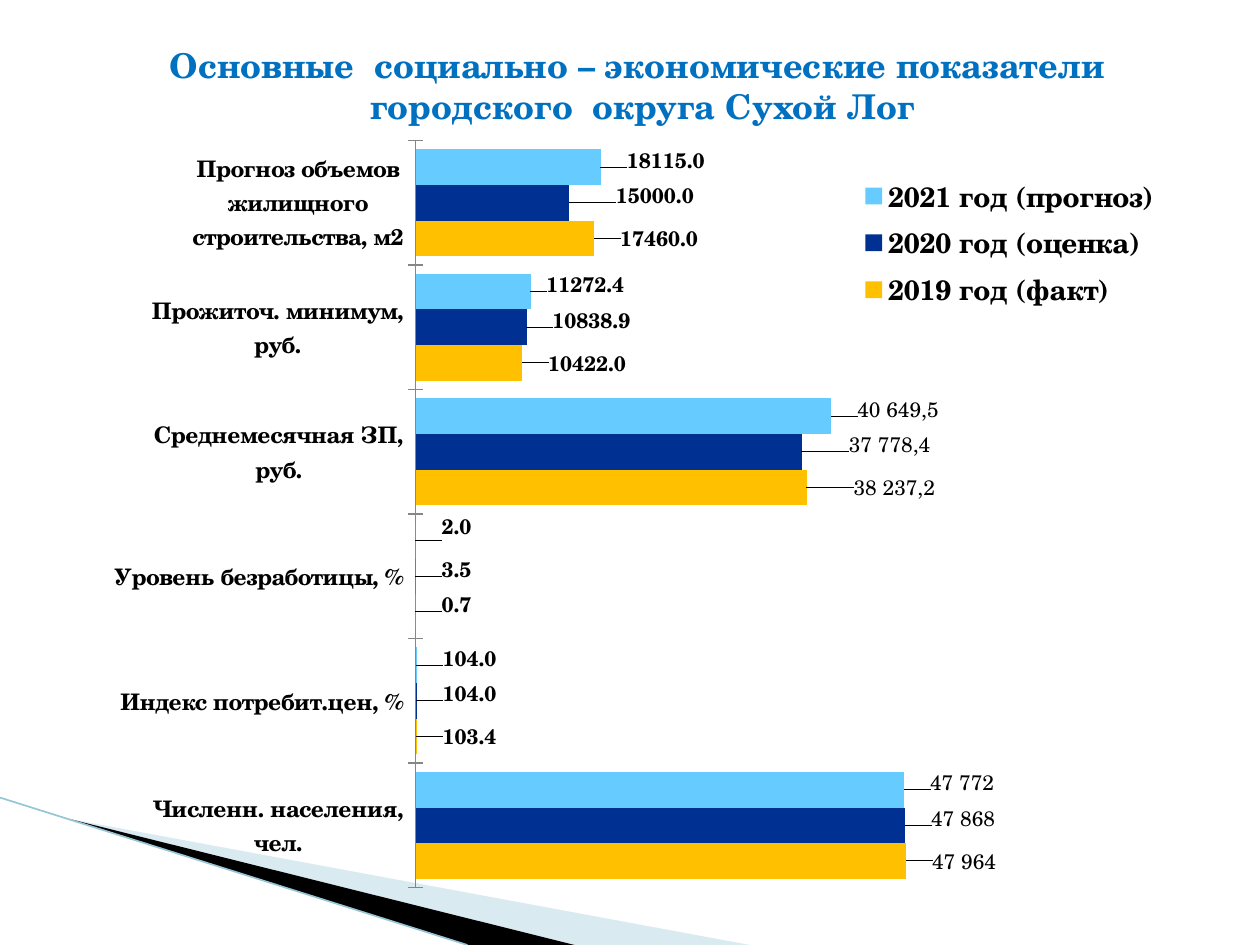
from dataclasses import dataclass

from lxml.etree import SubElement
from pptx import Presentation
from pptx.chart.data import CategoryChartData
from pptx.dml.color import RGBColor
from pptx.enum.chart import (XL_CHART_TYPE, XL_LABEL_POSITION, XL_LEGEND_POSITION,
                             XL_TICK_MARK)
from pptx.enum.shapes import MSO_CONNECTOR
from pptx.enum.text import MSO_ANCHOR, PP_ALIGN
from pptx.oxml import parse_xml
from pptx.oxml.ns import nsdecls, qn
from pptx.util import Inches, Pt


@dataclass(frozen=True)
class Theme:
    """Colours, faces and type sizes of the slide."""
    face: str = "TeX Gyre Schola"
    base: str = "Courier New"
    title: str = "0070C0"
    text: str = "000000"
    axis: str = "868686"
    pale: str = "A0CBDC"
    edge: str = "97C5D8"
    head: float = 19.5
    body: float = 18
    key: float = 16
    tick: float = 13
    label: float = 12


THEME = Theme()
TITLE = ("Основные  социально – экономические показатели ",
         "городского  округа Сухой Лог")
CATS = ("Численн. населения, чел.", "Индекс потребит.цен, %",
        "Уровень безработицы, %", "Среднемесячная ЗП, руб.",
        "Прожиточ. минимум, руб.", "Прогноз объемов жилищного строительства, м2")
SERIES = (
    ("2019 год (факт)", "FFC000", (47964, 103.4, 0.7, 38237.2, 10422, 17460),
     {0: "47 964", 3: "38 237,2"},
     ((0.02, 0), (0.02, 0), (0.02, -0.01), (0.04, 0), (0.02, 0), (0.02, 0))),
    ("2020 год (оценка)", "003192", (47868, 104, 3.5, 37778.4, 10838.9, 15000),
     {0: "47 868", 3: "37 778,4"},
     ((0.02, -0.01), (0.02, -0.01), (0.02, -0.01), (0.04, -0.01),
      (0.02, -0.01), (0.04, -0.01))),
    ("2021 год (прогноз)", "66CCFF", (47772, 104, 2, 40649.5, 11272.4, 18115),
     {0: "47 772", 3: "40 649,5"},
     ((0.02, -0.01), (0.02, -0.01), (0.02, -0.02), (0.02, -0.01),
      (0.01, -0.01), (0.02, -0.01))),
)


def style(font, size, color=THEME.text, bold=True, face=THEME.face):
    """Set face, size, weight and colour of a font."""
    font.name, font.size, font.bold = face, Pt(size), bold
    font.color.rgb = RGBColor.from_string(color)


def layout(**parts):
    """Return a manual chart layout element."""
    body = "".join(f'<c:{name} val="{val}"/>' for name, val in parts.items())
    return parse_xml(f'<c:layout {nsdecls("c")}><c:manualLayout>{body}'
                     '</c:manualLayout></c:layout>')


def place(part, **parts):
    """Give a chart part a manual layout in place of its old one."""
    for old in part.findall(qn("c:layout")):
        part.remove(old)
    node = layout(**parts)
    if part.tag == qn("c:plotArea"):
        part.insert(0, node)
    else:
        part[0].addnext(node)


def wedge(slide, points, color, alpha=100):
    """Draw a filled outline through points given in inches."""
    path = [(Inches(x), Inches(y)) for x, y in points]
    pen = slide.shapes.build_freeform(*path[0])
    pen.add_line_segments(path[1:], close=True)
    shape = pen.convert_to_shape()
    shape.shadow.inherit = False
    shape.line.fill.background()
    shape.fill.solid()
    shape.fill.fore_color.rgb = RGBColor.from_string(color)
    if alpha < 100:
        tint = shape.fill._xPr.find(f".//{qn('a:srgbClr')}")
        SubElement(tint, qn("a:alpha"), val=str(alpha * 1000))


def corner(slide, left, top, width, height):
    """Draw the wedges and the edge line in the lower left corner."""
    base = top + height
    tip = left + 0.55, top + 0.17
    wedge(slide, (tip, (left + width, base), (left + 4.56, base)), THEME.pale, 40)
    wedge(slide, (tip, (left + 4.56, base), (left + 3.71, base)), THEME.text)
    edge = slide.shapes.add_connector(MSO_CONNECTOR.STRAIGHT, Inches(left), Inches(top),
                                      Inches(left + 3.71), Inches(base))
    edge.line.width = Pt(0.95)
    edge.line.color.rgb = RGBColor.from_string(THEME.edge)
    SubElement(edge._element.spPr, qn("a:effectLst"))


def heading(slide, left, top, width, height):
    """Write the centred slide title."""
    box = slide.shapes.add_textbox(*map(Inches, (left, top, width, height)))
    frame = box.text_frame
    frame.word_wrap = True
    frame.vertical_anchor = MSO_ANCHOR.BOTTOM
    frame.margin_top = frame.margin_bottom = 0
    para = frame.paragraphs[0]
    para.alignment = PP_ALIGN.CENTER
    para.text = "\v".join(TITLE)
    style(para.font, THEME.head, THEME.title)


def tag(series, index, text, shift):
    """Label one bar, moved by a share of the chart size."""
    label = series.points[index].data_label
    if text:
        run = label.text_frame.paragraphs[0].add_run()
        run.text = text
        style(run.font, THEME.label, bold=False)
    else:
        style(label.font, THEME.label)
    label.position = XL_LABEL_POSITION.OUTSIDE_END
    node = next(item for item in series._element.iter(qn("c:dLbl"))
                if item.find(qn("c:idx")).get("val") == str(index))
    if not text:
        node[0].addnext(parse_xml(
            f'<c:numFmt {nsdecls("c")} formatCode="0.0" sourceLinked="0"/>'))
    place(node, x=shift[0], y=shift[1])


def bars(slide, left, top, width, height):
    """Add the bar chart of yearly figures."""
    data = CategoryChartData(number_format="0.0")
    data.categories = CATS
    for name, _, vals, _, _ in SERIES:
        data.add_series(name, vals)
    chart = slide.shapes.add_chart(XL_CHART_TYPE.BAR_CLUSTERED,
                                   *map(Inches, (left, top, width, height)), data).chart
    style(chart.font, THEME.body, bold=False, face=THEME.base)
    chart.has_title = False
    plot = chart.plots[0]
    plot.gap_width, plot.overlap, plot.vary_by_categories = 50, 0, False
    for series, (_, color, _, texts, shifts) in zip(plot.series, SERIES):
        series.format.fill.solid()
        series.format.fill.fore_color.rgb = RGBColor.from_string(color)
        labels = series.data_labels
        labels.show_value = True
        labels.number_format, labels.number_format_is_linked = "0.0", False
        style(labels.font, THEME.label)
        for index, shift in enumerate(shifts):
            tag(series, index, texts.get(index), shift)
    cat, val = chart.category_axis, chart.value_axis
    cat.major_tick_mark = XL_TICK_MARK.CROSS
    cat.format.line.color.rgb = RGBColor.from_string(THEME.axis)
    style(cat.tick_labels.font, THEME.tick)
    val.minimum_scale, val.maximum_scale = 0, 60000
    val.has_major_gridlines = val.visible = False
    chart.has_legend = True
    key = chart.legend
    key.position, key.include_in_layout = XL_LEGEND_POSITION.RIGHT, False
    style(key.font, THEME.key)
    place(key._element, xMode="edge", yMode="edge", x=0.7, y=0.04, w=0.3, h=0.19)
    place(chart._chartSpace.find(f".//{qn('c:plotArea')}"), layoutTarget="inner",
          xMode="edge", yMode="edge", x=0.284, y=0, w=0.585, h=0.986)


def main():
    """Build the slide and save it."""
    deck = Presentation()
    deck.slide_width, deck.slide_height = Inches(10), Inches(7.5)
    slide = deck.slides.add_slide(deck.slide_layouts[6])
    corner(slide, 0, 6.33, 5.95, 1.17)
    heading(slide, 0.56, 0.29, 9.08, 0.71)
    bars(slide, 0.91, 1.11, 8.35, 6.02)
    deck.save("out.pptx")


if __name__ == "__main__":
    main()
